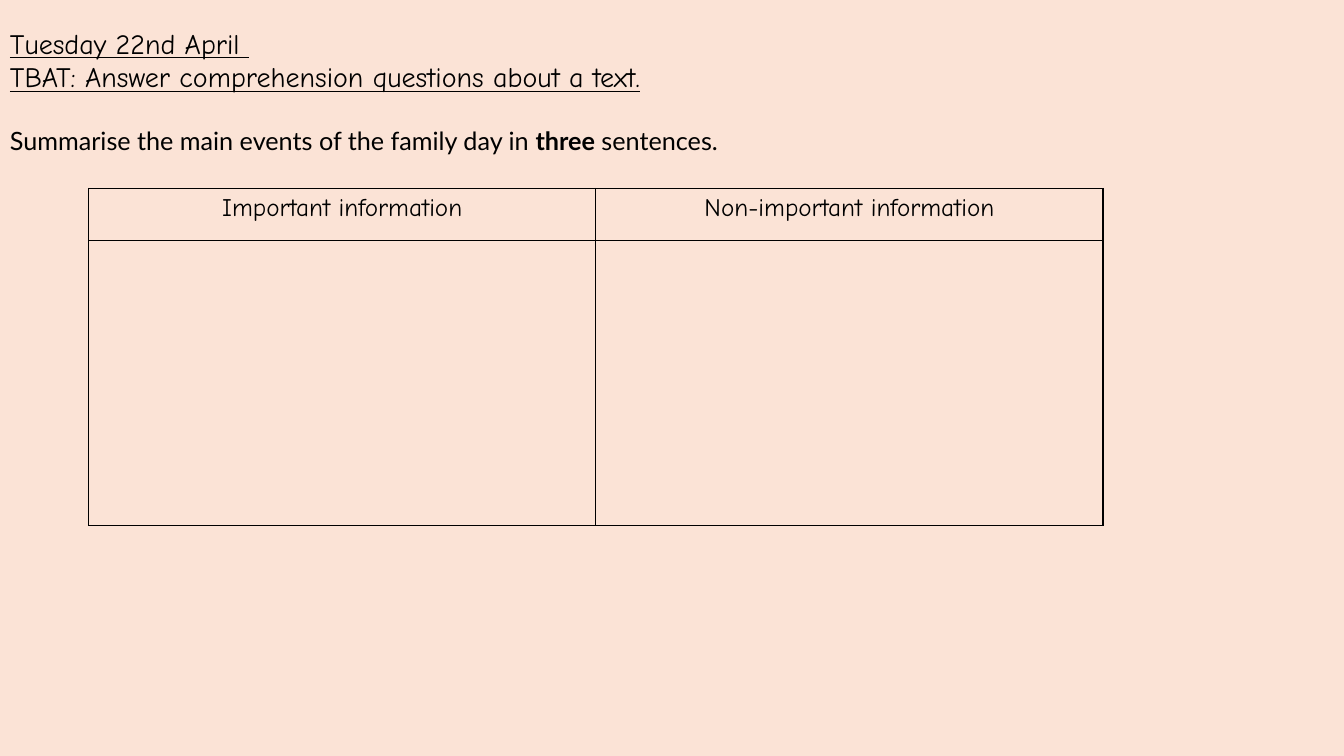
from lxml import etree
from pptx import Presentation
from pptx import util as u
from pptx.dml.color import RGBColor
from pptx.enum import text
from pptx.oxml import ns

PEACH = RGBColor(0xFB, 0xE3, 0xD6)
BLACK = RGBColor(0, 0, 0)


class Worksheet:
    """Holds the lesson style and the current page."""

    heading_font = "Comic Neue"
    body_font = "Lato"
    border_width = u.Pt(1)

    def __init__(self, deck):
        self.page = deck.slides.add_slide(deck.slide_layouts[6])
        fill = self.page.background.fill
        fill.solid()
        fill.fore_color.rgb = PEACH

    def add_span(self, para, words, font, size, bold=False, underline=False):
        span = para.add_run()
        span.text = words
        span.font.name = font
        span.font.size = u.Pt(size)
        span.font.bold = bold
        span.font.underline = underline
        span.font.color.rgb = BLACK

    def add_intro(self, left, top, width, height, headings, task):
        box = self.page.shapes.add_textbox(
            u.Inches(left), u.Inches(top), u.Inches(width), u.Inches(height))
        frame = box.text_frame
        frame.word_wrap = True
        para = frame.paragraphs[0]
        for index, heading in enumerate(headings):
            if index:
                para.add_line_break()
            self.add_span(para, heading, self.heading_font, 20, underline=True)
        para = frame.add_paragraph()
        para.space_before = u.Pt(23)
        for words, bold in task:
            self.add_span(para, words, self.body_font, 18, bold=bold)

    def add_borders(self, cell):
        properties = cell._tc.get_or_add_tcPr()
        for position, side in enumerate(("lnL", "lnR", "lnT", "lnB")):
            line = etree.Element(ns.qn(f"a:{side}"), w=str(self.border_width))
            solid = etree.SubElement(line, ns.qn("a:solidFill"))
            etree.SubElement(solid, ns.qn("a:srgbClr"), val=str(BLACK))
            properties.insert(position, line)

    def add_grid(self, left, top, width, row_heights, headers):
        table = self.page.shapes.add_table(
            len(row_heights), len(headers), u.Inches(left), u.Inches(top),
            u.Inches(width), u.Inches(sum(row_heights))).table
        table.horz_banding = False
        for row, height in zip(table.rows, row_heights):
            row.height = u.Inches(height)
        for cell in table.iter_cells():
            cell.fill.background()
            self.add_borders(cell)
        for column, header in enumerate(headers):
            para = table.cell(0, column).text_frame.paragraphs[0]
            para.alignment = text.PP_ALIGN.CENTER
            self.add_span(para, header, self.heading_font, 18)


def main():
    deck = Presentation()
    deck.slide_width = u.Inches(13.33)
    deck.slide_height = u.Inches(7.5)
    sheet = Worksheet(deck)
    sheet.add_intro(
        0, 0.21, 10.7, 2.69,
        ["Tuesday 22nd April ",
         "TBAT: Answer comprehension questions about a text."],
        [("Summarise the main events of the family day in ", False),
         ("three", True),
         (" sentences.", False)])
    sheet.add_grid(0.88, 1.87, 10.06, [0.52, 2.82],
                   ["Important information", "Non-important information"])
    deck.save("out.pptx")


if __name__ == "__main__":
    main()
